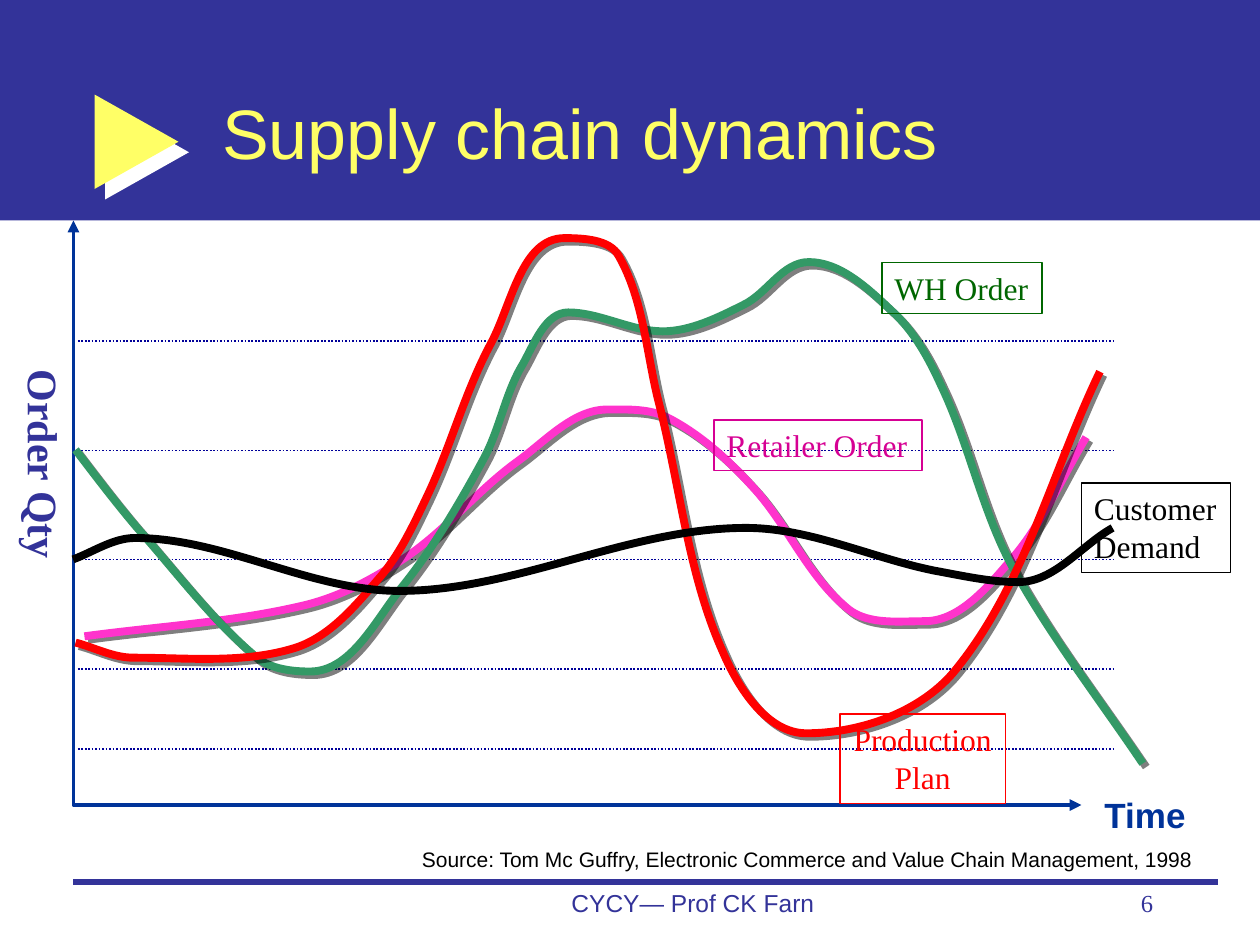
"""Build the supply chain dynamics slide with its four order curves."""
import math

import lxml.etree
import pptx
import pptx.dml.color
import pptx.enum.dml
import pptx.enum.shapes
import pptx.enum.text
import pptx.oxml.ns
import pptx.util

Pt = pptx.util.Pt
qn = pptx.oxml.ns.qn
ALIGN = pptx.enum.text.PP_ALIGN
SHAPE = pptx.enum.shapes.MSO_SHAPE
STRAIGHT = pptx.enum.shapes.MSO_CONNECTOR.STRAIGHT
SERIF = "Times New Roman"
COLORS = {
    "indigo": "333399", "yellow": "FFFF66", "white": "FFFFFF", "black": "000000",
    "axis": "003399", "grid": "000099", "pink": "FF33CC", "magenta": "D60093",
    "green": "339966", "dark green": "006600", "red": "FF0000",
}
RGB = {name: pptx.dml.color.RGBColor.from_string(value) for name, value in COLORS.items()}


def set_shadow(shape, color=None, opacity=100, distance=0):
    """Replace the theme shadow with none, or with one falling at 45 degrees."""
    properties = shape._element.spPr
    effects = lxml.etree.SubElement(properties, qn("a:effectLst"))
    if color:
        shadow = lxml.etree.SubElement(
            effects, qn("a:outerShdw"), dist=str(Pt(distance)), dir="2700000",
            algn="ctr", rotWithShape="0")
        tint = lxml.etree.SubElement(shadow, qn("a:srgbClr"), val=COLORS[color])
        lxml.etree.SubElement(tint, qn("a:alpha"), val=str(opacity * 1000))


def add_text(place, lines, size, font, color, align=ALIGN.LEFT, bold=False, wrap=False):
    """Add a text box with one paragraph for each line."""
    box = page.shapes.add_textbox(*map(Pt, place))
    box.text_frame.word_wrap = wrap
    for index, line in enumerate(lines):
        para = box.text_frame.add_paragraph() if index else box.text_frame.paragraphs[0]
        para.alignment = align
        span = para.add_run()
        span.text = line
        span.font.size = Pt(size)
        span.font.name = font
        span.font.bold = bold
        span.font.color.rgb = RGB[color]
    return box


deck = pptx.Presentation()
deck.slide_width, deck.slide_height = Pt(720), Pt(540)
page = deck.slides.add_slide(deck.slide_layouts[6])

banner = page.shapes.add_shape(SHAPE.RECTANGLE, 0, 0, Pt(720), Pt(126))
marker = page.shapes.add_shape(SHAPE.RIGHT_ARROW, Pt(54), Pt(54), Pt(48), Pt(54))
marker.adjustments[0], marker.adjustments[1] = 0.38, 1
for shape, color in ((banner, "indigo"), (marker, "yellow")):
    shape.fill.solid()
    shape.fill.fore_color.rgb = RGB[color]
    shape.line.fill.background()
set_shadow(banner)
set_shadow(marker, "white", 100, 8.5)

title = add_text((120, 30, 546, 90), ["Supply chain dynamics"], 40, "Arial", "yellow", wrap=True)
title.text_frame.vertical_anchor = pptx.enum.text.MSO_ANCHOR.MIDDLE

pen = page.shapes.build_freeform(Pt(42), Pt(126))
pen.add_line_segments([(Pt(42), Pt(460)), (Pt(618), Pt(460))], close=False)
axes = pen.convert_to_shape()
axes.fill.background()
axes.line.color.rgb = RGB["axis"]
axes.line.width = Pt(2.25)
for end in ("a:headEnd", "a:tailEnd"):
    lxml.etree.SubElement(axes.line._get_or_add_ln(), qn(end), type="triangle")
set_shadow(axes)

rules = [(44.5, 636.5, 195 + 62.4 * step, "grid", 1) for step in range(4)]
rules += [(44.5, 636.5, 428, "grid", 1), (42, 696, 504, "indigo", 3)]
for left, right, height, color, width in rules:
    rule = page.shapes.add_connector(STRAIGHT, Pt(left), Pt(height), Pt(right), Pt(height))
    rule.line.color.rgb = RGB[color]
    rule.line.width = Pt(width)
    if color == "grid":
        rule.line.dash_style = pptx.enum.dml.MSO_LINE.ROUND_DOT
    set_shadow(rule)

CURVE_UNIT = Pt(0.72)
CURVES = {
    "pink": [
        (67, 505), (243, 480), (321, 443), (411, 366), (482, 325), (531, 332),
        (597, 386), (674, 484), (734, 493), (801, 446), (862, 347)],
    "green": [
        (60, 357), (109, 419), (204, 522), (246, 533), (319, 466), (384, 364),
        (415, 289), (451, 248), (526, 263), (590, 242), (642, 208), (707, 246),
        (747, 306), (803, 449), (907, 606)],
    "red": [
        (60, 510), (106, 522), (235, 514), (300, 460), (339, 394), (390, 272),
        (448, 189), (491, 203), (523, 320), (574, 518), (640, 582), (759, 531),
        (873, 295)],
    "black": [
        (58, 444), (107, 427), (317, 469), (592, 419), (742, 453), (808, 462),
        (883, 419)],
}
for color, knots in CURVES.items():
    headings = []
    for before, knot, after in zip(knots[:1] + knots, knots, knots[1:] + knots[-1:]):
        turning = (before[1] - knot[1]) * (after[1] - knot[1]) > 0
        rise = 0 if turning else after[1] - before[1]
        headings.append(math.atan2(rise, after[0] - before[0]))
    points = []
    for index, (start, stop) in enumerate(zip(knots, knots[1:])):
        reach = math.dist(start, stop) / 3
        leave, arrive = headings[index:index + 2]
        points += [
            (start[0] + reach * math.cos(leave), start[1] + reach * math.sin(leave)),
            (stop[0] - reach * math.cos(arrive), stop[1] - reach * math.sin(arrive)),
            stop]
    pen = page.shapes.build_freeform(*knots[0], scale=CURVE_UNIT)
    pen.add_line_segments(points, close=False)
    curve = pen.convert_to_shape()
    segments = list(curve._element.iter(qn("a:lnTo")))
    for first in range(0, len(segments), 3):
        bezier = lxml.etree.Element(qn("a:cubicBezTo"))
        segments[first].addprevious(bezier)
        for segment in segments[first:first + 3]:
            bezier.append(segment[0])
            segment.getparent().remove(segment)
    curve.fill.background()
    curve.line.color.rgb = RGB[color]
    curve.line.width = Pt(4.5)
    if color == "black":
        set_shadow(curve)
    else:
        set_shadow(curve, "black", 50, 2.8)

for left, top, width, lines, color, align in (
    (408, 240, 119, ["Retailer Order"], "magenta", ALIGN.LEFT),
    (504, 150, 91.5, ["WH Order"], "dark green", ALIGN.LEFT),
    (480, 408, 94.5, ["Production", "Plan"], "red", ALIGN.CENTER),
    (618, 276, 85, ["Customer", "Demand"], "black", ALIGN.LEFT),
):
    label = add_text((left, top, width, 7 + 22 * len(lines)), lines, 18, SERIF, color, align)
    label.line.color.rgb = RGB[color]
    label.line.width = Pt(0.75)

add_text((624, 450, 61, 31.5), ["Time"], 20, "Arial", "axis", bold=True)
add_text((234, 480, 458, 22),
         ["Source: Tom Mc Guffry, Electronic Commerce and Value Chain Management, 1998"],
         12, "Arial", "black")
quantity = add_text((0, 204, 43.5, 185), ["Order Qty"], 24, SERIF, "indigo",
                    bold=True, wrap=True)
quantity.text_frame._txBody.bodyPr.set("vert", "eaVert")
add_text((282, 504, 228, 36), ["CYCY— Prof CK Farn"], 14, "Arial", "indigo",
         ALIGN.CENTER, wrap=True)
add_text((516, 504, 150, 36), ["6"], 14, SERIF, "indigo", ALIGN.RIGHT, wrap=True)

deck.save("out.pptx")
